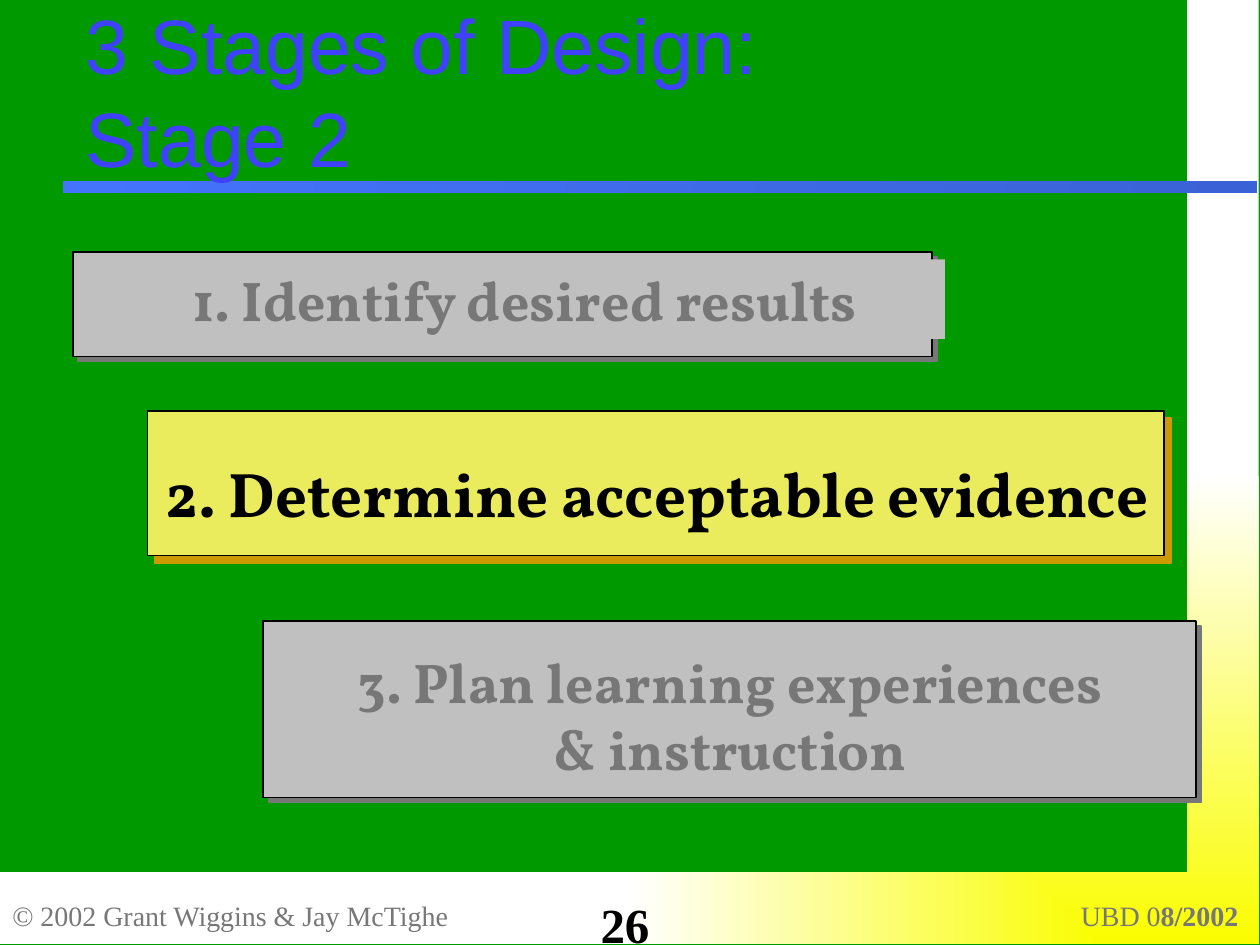
"""Build the slide that highlights the second of three stages of design."""
from dataclasses import dataclass
from typing import Optional

from lxml.etree import SubElement
from pptx import Presentation
from pptx.dml.color import RGBColor
from pptx.enum.shapes import MSO_SHAPE
from pptx.enum.text import MSO_ANCHOR, MSO_AUTO_SIZE, PP_ALIGN
from pptx.oxml import parse_xml
from pptx.oxml.ns import nsdecls, qn
from pptx.util import Inches, Pt

GREEN = RGBColor(0x00, 0x99, 0x00)
YELLOW = RGBColor(0xFA, 0xFD, 0x00)
WHITE = RGBColor(0xFF, 0xFF, 0xFF)
BLACK = RGBColor(0x00, 0x00, 0x00)
SILVER = RGBColor(0xC0, 0xC0, 0xC0)
GRAY = RGBColor(0x77, 0x77, 0x77)
PALE_YELLOW = RGBColor(0xEA, 0xEC, 0x5E)
OCHRE = RGBColor(0xCC, 0x99, 0x00)
TITLE_BLUE = RGBColor(0x40, 0x40, 0xFF)
BAR_START = RGBColor(0x44, 0x74, 0xFC)
BAR_END = RGBColor(0x3A, 0x62, 0xD6)


@dataclass(frozen=True)
class Area:
    """Position and size in inches."""
    left: float
    top: float
    width: float
    height: float

    def lengths(self) -> tuple:
        """Return the four values as lengths."""
        return tuple(Inches(v) for v in (self.left, self.top, self.width, self.height))


@dataclass(frozen=True)
class Stage:
    """One stage: a shadowed panel with a label on it."""
    lines: tuple
    panel: Area
    label: Area
    fill: RGBColor = SILVER
    label_fill: Optional[RGBColor] = SILVER
    color: RGBColor = GRAY
    size: int = 32
    shadow: RGBColor = GRAY
    distance: float = 4.2


STAGES = (
    Stage(("1. Identify desired results",),
          Area(0.58, 2, 6.82, 0.83), Area(0.83, 2.06, 6.67, 0.63)),
    Stage(("2. Determine acceptable evidence",),
          Area(1.17, 3.26, 8.07, 1.15), Area(1.05, 3.56, 8.33, 0.7),
          PALE_YELLOW, None, BLACK, 36, OCHRE, 5.7),
    Stage(("3. Plan learning experiences", "& instruction"),
          Area(2.09, 4.93, 7.4, 1.4), Area(2.17, 5.09, 7.25, 1.17)),
)


def add_panel(page, area: Area, fill: Optional[RGBColor] = None):
    """Add a rectangle without line or inherited shadow."""
    panel = page.shapes.add_shape(MSO_SHAPE.RECTANGLE, *area.lengths())
    panel.shadow.inherit = False
    panel.line.fill.background()
    if fill is not None:
        panel.fill.solid()
        panel.fill.fore_color.rgb = fill
    return panel


def add_text(page, area: Area, lines: tuple, font_name: str, size: int,
             color: RGBColor, bold: bool = False, align=PP_ALIGN.CENTER):
    """Add a wrapping text box with one paragraph for each line."""
    box = page.shapes.add_textbox(*area.lengths())
    frame = box.text_frame
    frame.word_wrap = True
    frame.text = "\n".join(lines)
    for para in frame.paragraphs:
        para.alignment = align
        style_font(para.font, font_name, size, color, bold)
    return box


def style_font(font, name: str, size: int, color: RGBColor, bold: bool = False) -> None:
    """Set the face, size, colour and weight of a font."""
    font.name, font.size, font.bold = name, Pt(size), bold
    font.color.rgb = color


def add_shadow(panel, color: RGBColor, distance: float) -> None:
    """Give a panel a hard shadow to its lower right."""
    effects = panel._element.spPr.find(qn("a:effectLst"))
    shadow = SubElement(effects, qn("a:outerShdw"), blurRad="0", dist=str(int(Pt(distance))),
                        dir="2700000", algn="ctr", rotWithShape="0")
    SubElement(shadow, qn("a:srgbClr"), val=str(color))


def add_backdrop(page) -> None:
    """Draw the glowing border, the green field and the bar below the title."""
    border = add_panel(page, Area(0, 0, 9.99, 7.49))
    glow = parse_xml(
        f'<a:gradFill {nsdecls("a")} rotWithShape="0"><a:gsLst>'
        f'<a:gs pos="0"><a:srgbClr val="{YELLOW}"/></a:gs>'
        f'<a:gs pos="100000"><a:srgbClr val="{WHITE}"/></a:gs></a:gsLst>'
        '<a:path path="rect"><a:fillToRect l="100000" t="100000"/></a:path></a:gradFill>')
    border._element.spPr.find(qn("a:prstGeom")).addnext(glow)
    add_panel(page, Area(0, 0, 9.42, 6.92), GREEN)
    bar = add_panel(page, Area(0.5, 1.44, 9.48, 0.09))
    bar.fill.gradient()
    bar.fill.gradient_angle = 0
    for stop, color in zip(bar.fill.gradient_stops, (BAR_START, BAR_END)):
        stop.color.rgb = color


def add_footer(page) -> None:
    """Add the credit, the course date and the page number."""
    credit = add_text(page, Area(0, 7.08, 10, 0.36),
                      ("© 2002 Grant Wiggins & Jay McTighe\tUBD 0",),
                      "Times New Roman", 16, GRAY, align=PP_ALIGN.LEFT)
    para = credit.text_frame.paragraphs[0]
    span = para.add_run()
    span.text = "8/2002"
    span.font.bold = True
    tabs = parse_xml(f'<a:tabLst {nsdecls("a")}>'
                     f'<a:tab pos="{int(Inches(9.73))}" algn="r"/></a:tabLst>')
    para._p.pPr.find(qn("a:defRPr")).addprevious(tabs)
    add_text(page, Area(0.5, 7.05, 8.92, 0.56), ("26",), "Times New Roman", 28, BLACK, True)


def add_stage(page, stage: Stage) -> None:
    """Draw one stage panel and its label."""
    panel = add_panel(page, stage.panel, stage.fill)
    panel.line.color.rgb = BLACK
    panel.line.width = Pt(1)
    add_shadow(panel, stage.shadow, stage.distance)
    label = add_text(page, stage.label, stage.lines, "Vollkorn", stage.size, stage.color, True)
    if stage.label_fill is not None:
        label.fill.solid()
        label.fill.fore_color.rgb = stage.label_fill


def place_title(page) -> None:
    """Format the title placeholder and bring it to the front."""
    title = page.shapes.title
    title.left, title.top, title.width, title.height = Area(0.58, 0.67, 8.48, 0.83).lengths()
    frame = title.text_frame
    frame.text = "3 Stages of Design:\vStage 2"
    frame.auto_size = MSO_AUTO_SIZE.NONE
    frame.vertical_anchor = MSO_ANCHOR.BOTTOM
    para = frame.paragraphs[0]
    para.alignment = PP_ALIGN.LEFT
    style_font(para.font, "Arial", 44, TITLE_BLUE)
    page.shapes._spTree.append(title._element)


def main() -> None:
    """Build and save the deck."""
    deck = Presentation()
    deck.slide_width, deck.slide_height = Inches(10), Inches(7.5)
    page = deck.slides.add_slide(deck.slide_layouts[5])
    page.background.fill.solid()
    page.background.fill.fore_color.rgb = GREEN
    add_backdrop(page)
    add_footer(page)
    for stage in STAGES:
        add_stage(page, stage)
    place_title(page)
    deck.save("out.pptx")


if __name__ == "__main__":
    main()
